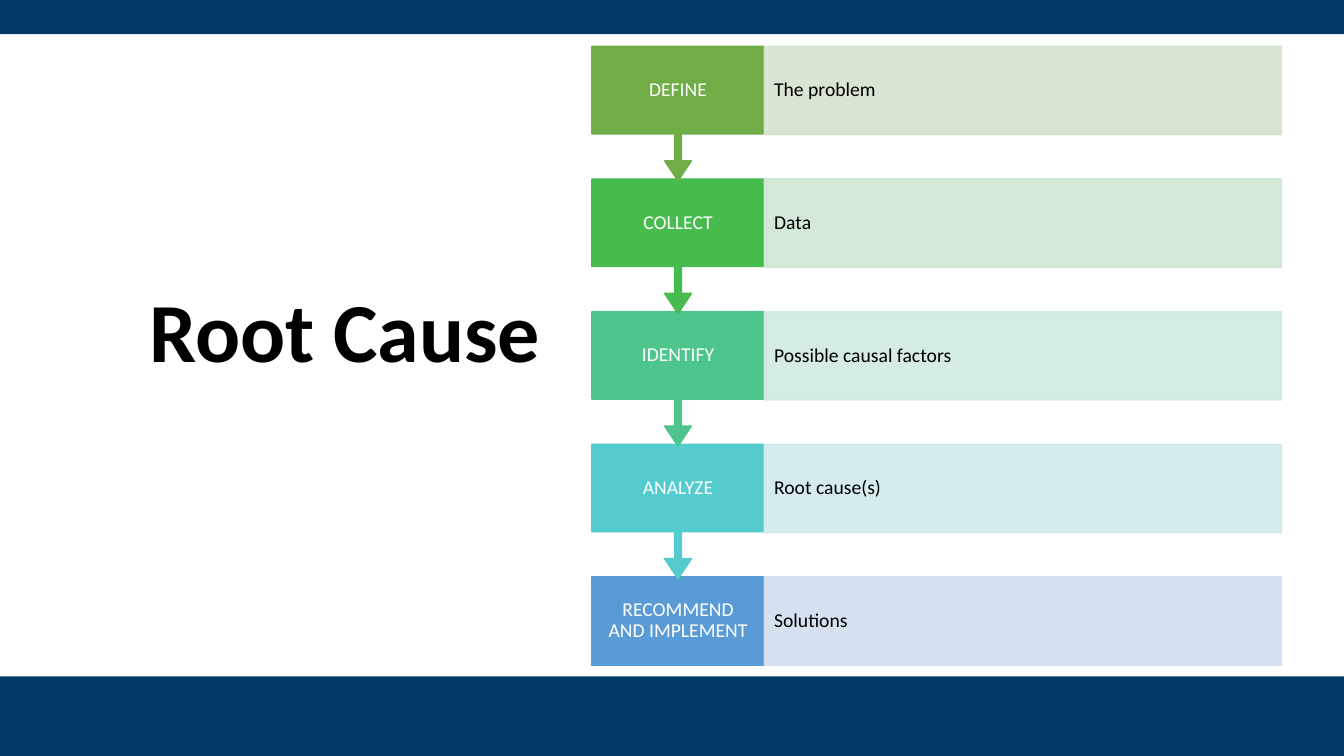
from dataclasses import dataclass

from lxml import etree
from pptx import Presentation
from pptx import util as u
from pptx.dml.color import RGBColor
from pptx.enum import shapes, text
from pptx.oxml.ns import qn


@dataclass(frozen=True)
class Theme:
    font: str = "Calibri"
    title_size: int = 60
    step_size: int = 14
    line_width: int = 1
    line_spacing: float = 0.9
    band: str = "003865"
    dark: str = "000000"
    light: str = "FFFFFF"
    tint_opacity: int = 90


@dataclass(frozen=True)
class Box:
    left: float
    top: float
    width: float
    height: float

    def inches(self):
        return [u.Inches(v) for v in (self.left, self.top, self.width, self.height)]


THEME = Theme()
SLIDE = Box(0, 0, 13.33, 7.5)
TOP_BAND = Box(0, 0, SLIDE.width, 0.34)
BOTTOM_BAND = Box(0, 6.71, SLIDE.width, 0.79)
TITLE = Box(0.8, 0.45, 5.39, 5.76)
PROCESS = Box(5.87, 0.46, 6.84, 6.14)
ACTION_SHARE = 0.25
ROW_TO_GAP = 2
ARROW_OVERLAP = 0.02
STEPS = [
    ("DEFINE", "The problem", "70AD47", "D5E3CF"),
    ("COLLECT", "Data", "48BB4F", "D0E6D4"),
    ("IDENTIFY", "Possible causal factors", "4DC58D", "D0EAE1"),
    ("ANALYZE", "Root cause(s)", "54CCCD", "D1E9ED"),
    ("RECOMMEND AND IMPLEMENT", "Solutions", "5B9BD5", "D2DEEF"),
]


def set_opacity(fill, percent):
    for color in fill._xPr.iter(qn("a:srgbClr")):
        etree.SubElement(color, qn("a:alpha")).set("val", str(percent * 1000))


def add_block(slide, box, color, kind=shapes.MSO_SHAPE.RECTANGLE, opacity=100):
    block = slide.shapes.add_shape(kind, *box.inches())
    block.shadow.inherit = False
    block.line.width = u.Pt(THEME.line_width)
    for fill in (block.fill, block.line.fill):
        fill.solid()
        fill.fore_color.rgb = RGBColor.from_string(color)
    if opacity < 100:
        set_opacity(block.fill, opacity)
    return block


def write(shape, words, size, color, align, insets, bold=False):
    frame = shape.text_frame
    frame.text = words
    frame.word_wrap = True
    frame.auto_size = text.MSO_AUTO_SIZE.NONE
    frame.vertical_anchor = text.MSO_ANCHOR.MIDDLE
    frame.margin_left, frame.margin_top, frame.margin_right, frame.margin_bottom = [
        u.Inches(inset) for inset in insets
    ]
    paragraph = frame.paragraphs[0]
    paragraph.alignment = align
    paragraph.line_spacing = THEME.line_spacing
    font = paragraph.runs[0].font
    font.name = THEME.font
    font.size = u.Pt(size)
    font.bold = bold
    font.color.rgb = RGBColor.from_string(color)


def add_band(slide, box):
    add_block(slide, box, THEME.band).line.fill.background()


def add_title(slide, box, words):
    title = slide.shapes.title
    title.left, title.top, title.width, title.height = box.inches()
    write(title, words, THEME.title_size, THEME.dark, text.PP_ALIGN.CENTER,
          (0.1, 0.05, 0.25, 0.05), bold=True)


def add_step(slide, box, row_height, step, has_arrow):
    action, detail, color, tint = step
    action_width = box.width * ACTION_SHARE
    if has_arrow:
        block = add_block(slide, Box(box.left, box.top, action_width, box.height), color,
                          shapes.MSO_SHAPE.DOWN_ARROW_CALLOUT)
        for index, share in enumerate((0.05, 0.1, 0.15, 0.65)):
            block.adjustments[index] = share
    else:
        block = add_block(slide, Box(box.left, box.top, action_width, row_height), color)
    write(block, action, THEME.step_size, THEME.light, text.PP_ALIGN.CENTER,
          (0.12, 0.11, 0.12, 0.11))
    result = add_block(
        slide, Box(box.left + action_width, box.top, box.width - action_width, row_height),
        tint, opacity=THEME.tint_opacity)
    set_opacity(result.line.fill, THEME.tint_opacity)
    write(result, detail, THEME.step_size, THEME.dark, text.PP_ALIGN.LEFT,
          (0.1, 0.19, 0.1, 0.19))


def add_process(slide, box, steps):
    last = len(steps) - 1
    gap = box.height / (len(steps) * ROW_TO_GAP + last)
    row_height = gap * ROW_TO_GAP
    pitch = row_height + gap
    for index, step in reversed(list(enumerate(steps))):
        row = Box(box.left, box.top + index * pitch, box.width, pitch + ARROW_OVERLAP)
        add_step(slide, row, row_height, step, index < last)


def main():
    deck = Presentation()
    deck.slide_width = u.Inches(SLIDE.width)
    deck.slide_height = u.Inches(SLIDE.height)
    slide = deck.slides.add_slide(deck.slide_layouts[5])
    add_band(slide, TOP_BAND)
    add_band(slide, BOTTOM_BAND)
    add_title(slide, TITLE, "Root Cause")
    add_process(slide, PROCESS, STEPS)
    deck.save("out.pptx")


if __name__ == "__main__":
    main()
